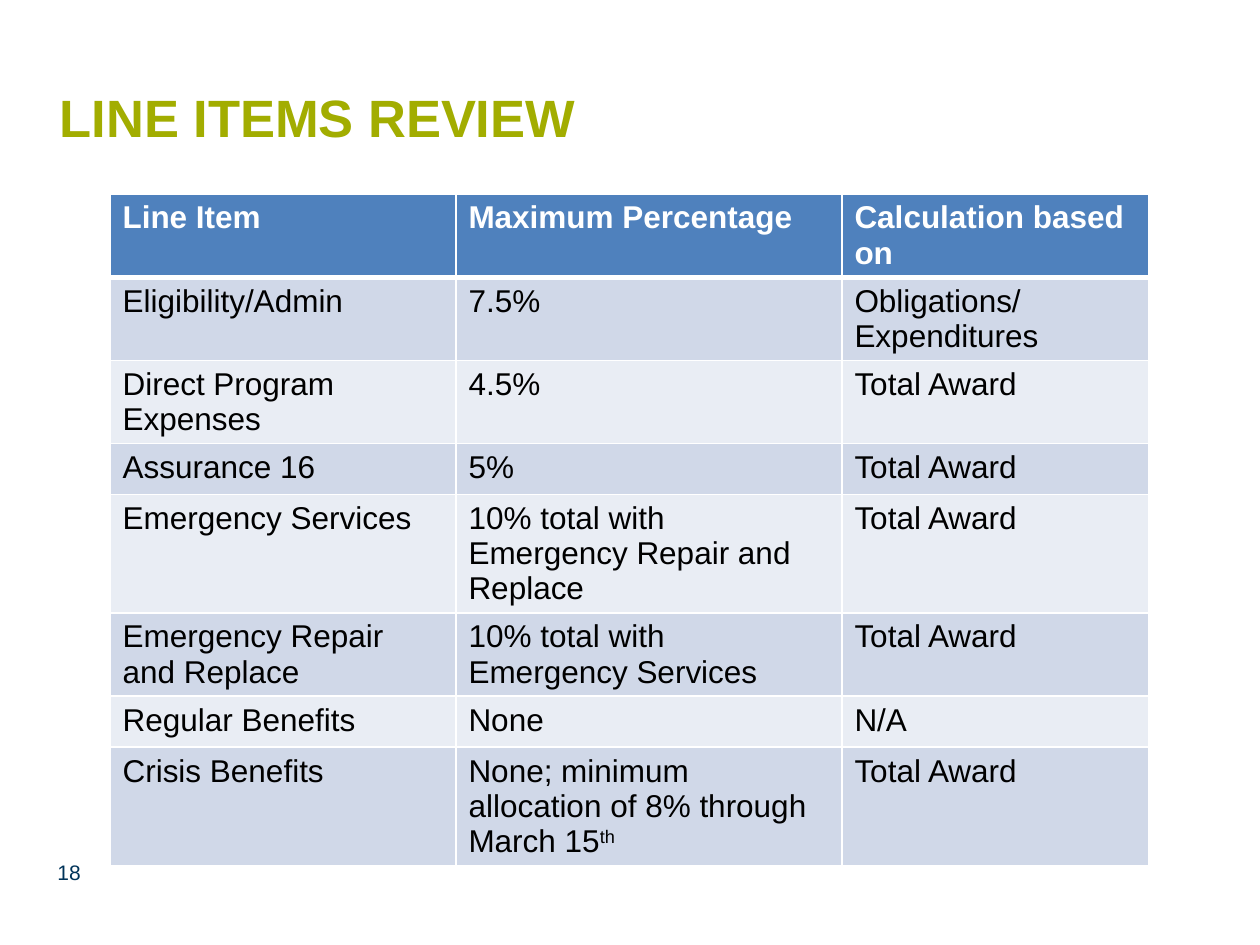
from dataclasses import dataclass

from lxml import etree
from pptx import Presentation
from pptx import util as u
from pptx.dml import color
from pptx.enum import text
from pptx.oxml import ns

SCALE = 914400 / 126


@dataclass(frozen=True)
class Theme:
    font: str = "Arial"
    title: str = "A2AD00"
    head: str = "4F81BD"
    bands: tuple = ("D0D8E8", "E9EDF4")
    light: str = "FFFFFF"
    dark: str = "000000"
    page: str = "003359"
    big: int = 30
    body: int = 18
    small: int = 12


THEME = Theme()

HEAD = ("Line Item", "Maximum Percentage", "Calculation based on")
ITEMS = (
    ("Eligibility/Admin", "7.5%", "Obligations/\nExpenditures"),
    ("Direct Program Expenses", "4.5%", "Total Award"),
    ("Assurance 16", "5%", "Total Award"),
    ("Emergency Services", "10% total with Emergency Repair and Replace", "Total Award"),
    ("Emergency Repair and Replace", "10% total with Emergency Services", "Total Award"),
    ("Regular Benefits", "None", "N/A"),
    ("Crisis Benefits", ("None; minimum allocation of 8% through March 15", "th"), "Total Award"),
)


def px(*sizes):
    return [u.Emu(round(size * SCALE)) for size in sizes]


def rgb(code):
    return color.RGBColor.from_string(code)


def add_run(para, words, size, ink, bold=False, raised=False):
    for count, line in enumerate(words.split("\n")):
        if count:
            para.add_line_break()
        run = para.add_run()
        run.text = line
        font = run.font
        font.name, font.size, font.bold = THEME.font, u.Pt(size), bold
        font.color.rgb = rgb(ink)
        if raised:
            font._element.set("baseline", "30000")


def add_title(slide, words):
    title = slide.shapes.title
    title.left, title.top, title.width, title.height = px(47, 38, 1153, 157)
    frame = title.text_frame
    frame.vertical_anchor = text.MSO_ANCHOR.MIDDLE
    para = frame.paragraphs[0]
    para.alignment = text.PP_ALIGN.LEFT
    add_run(para, words, THEME.big, THEME.title, True)


def add_edge(cell, side, width):
    props = cell._tc.get_or_add_tcPr()
    line = etree.SubElement(props, ns.qn("a:ln" + side), w=str(u.Pt(width)))
    fill = etree.SubElement(line, ns.qn("a:solidFill"))
    etree.SubElement(fill, ns.qn("a:srgbClr"), val=THEME.light)


def fill_cell(cell, words, row):
    head = row == 0
    for side in "LRTB":
        thick = (head and side == "B") or (row == 1 and side == "T")
        add_edge(cell, side, 3 if thick else 1)
    cell.fill.solid()
    cell.fill.fore_color.rgb = rgb(THEME.head if head else THEME.bands[(row - 1) % 2])
    ink = THEME.light if head else THEME.dark
    parts = (words,) if isinstance(words, str) else words
    for count, part in enumerate(parts):
        add_run(cell.text_frame.paragraphs[0], part, THEME.body, ink, head, count > 0)


def add_grid(slide, rows, widths, left, top, height):
    spot = px(left, top, sum(widths), height * len(rows))
    table = slide.shapes.add_table(len(rows), len(widths), *spot).table
    for column, width in zip(table.columns, px(*widths)):
        column.width = width
    for row, items in enumerate(rows):
        for col, words in enumerate(items):
            fill_cell(table.cell(row, col), words, row)


def add_page(slide, number):
    frame = slide.shapes.add_textbox(*px(45, 847, 294, 50)).text_frame
    frame.word_wrap = True
    frame.vertical_anchor = text.MSO_ANCHOR.MIDDLE
    add_run(frame.paragraphs[0], number, THEME.small, THEME.page)


def main():
    deck = Presentation()
    deck.slide_width, deck.slide_height = px(1260, 945)
    slide = deck.slides.add_slide(deck.slide_layouts[5])
    add_title(slide, "LINE ITEMS REVIEW")
    add_grid(slide, (HEAD,) + ITEMS, (346, 386, 307), 110, 194, 51)
    add_page(slide, "18")
    deck.save("out.pptx")


if __name__ == "__main__":
    main()
